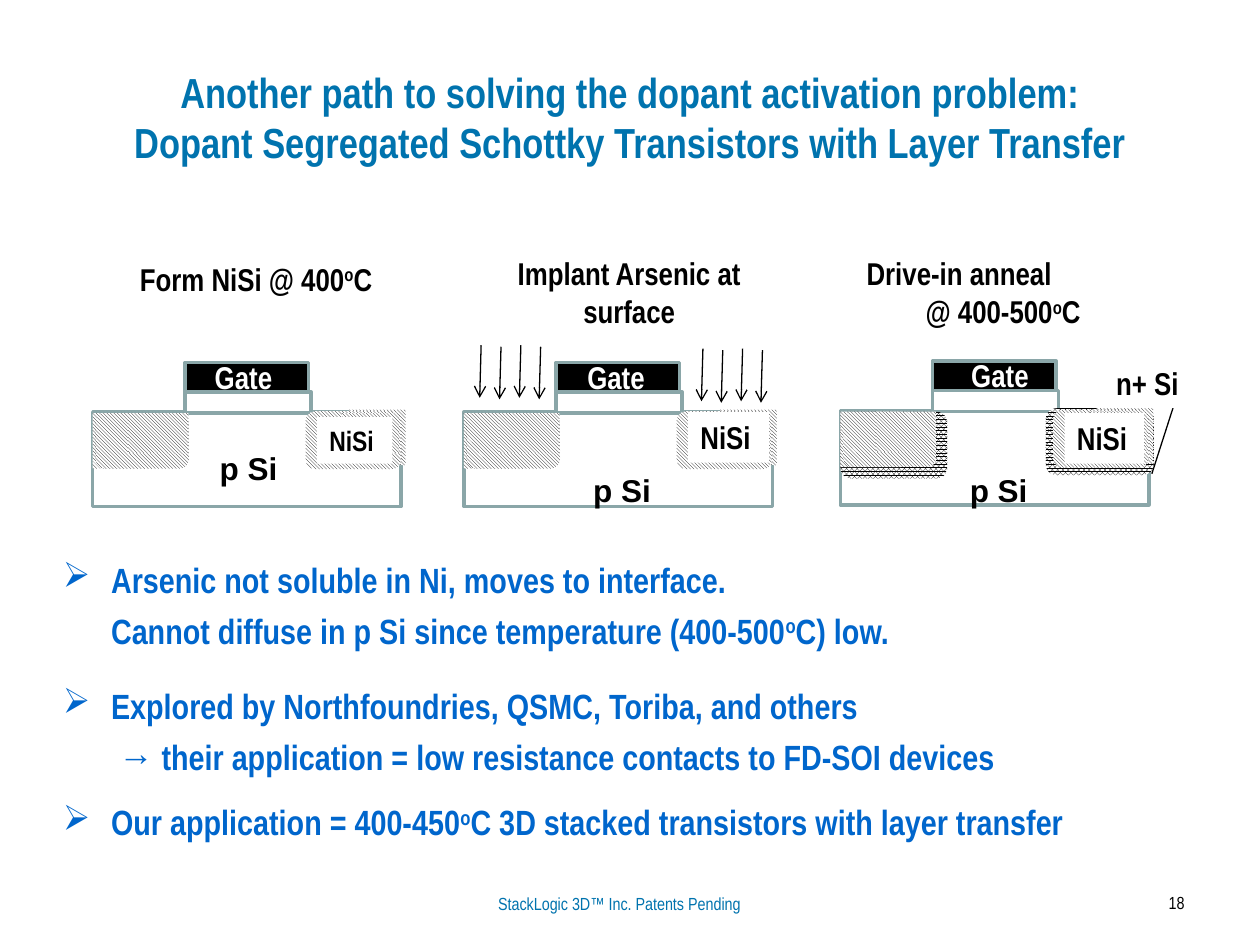
import pptx
import pptx.dml.color
import pptx.enum.dml
import pptx.enum.shapes
import pptx.enum.text
import pptx.oxml
import pptx.oxml.ns
import pptx.util
from lxml import etree

Cm = pptx.util.Cm
Pt = pptx.util.Pt
RGBColor = pptx.dml.color.RGBColor
SHAPE = pptx.enum.shapes.MSO_SHAPE
PATTERN = pptx.enum.dml.MSO_PATTERN
ALIGN = pptx.enum.text.PP_ALIGN
ANCHOR = pptx.enum.text.MSO_ANCHOR

BLACK = RGBColor(0, 0, 0)
WHITE = RGBColor(255, 255, 255)
TITLE_BLUE = RGBColor(0x00, 0x73, 0xAE)
BODY_BLUE = RGBColor(0x00, 0x66, 0xCC)
OUTLINE = RGBColor(0x8A, 0xA6, 0xA8)
NARROW = "Arial Narrow"


def add_child(parent, tag, **attributes):
    return etree.SubElement(parent, pptx.oxml.ns.qn(tag), **attributes)


def write(paragraph, text, size=18, color=BLACK, font=NARROW, bold=True,
          align=ALIGN.LEFT, space_before=0, margin=0, hang=0, bullet=None):
    """Fill a paragraph; text between a pair of ^ marks is superscript."""
    properties = paragraph._p.get_or_add_pPr()
    properties.set("marL", str(Cm(margin)))
    properties.set("indent", str(-Cm(hang)))
    paragraph.alignment = align
    paragraph.space_before = Pt(space_before)
    if bullet:
        add_child(properties, "a:buChar", char=bullet)
    else:
        add_child(properties, "a:buNone")
    for index, part in enumerate(text.split("^")):
        run = paragraph.add_run()
        run.text = part
        run.font.size = Pt(size)
        run.font.name = font
        run.font.bold = bold
        run.font.color.rgb = color
        if index % 2:
            run._r.get_or_add_rPr().set("baseline", "30000")


class Sketch:
    """Draws on one slide; boxes are (left, top, width, height) in cm."""

    def __init__(self, slide):
        self.slide = slide

    def text(self, box, *lines, anchor=ANCHOR.TOP, **style):
        """Each line is a string, or a string with its own format."""
        frame = self.slide.shapes.add_textbox(*map(Cm, box)).text_frame
        frame.word_wrap = True
        frame.vertical_anchor = anchor
        for index, line in enumerate(lines):
            words, own = (line, {}) if isinstance(line, str) else line
            paragraph = frame.add_paragraph() if index else frame.paragraphs[0]
            write(paragraph, words, **{**style, **own})

    def block(self, box, fill=WHITE, outlined=True, label=None, size=18):
        block = self.slide.shapes.add_shape(SHAPE.RECTANGLE, *map(Cm, box))
        block.shadow.inherit = False
        block.fill.solid()
        block.fill.fore_color.rgb = fill
        if outlined:
            block.line.color.rgb = OUTLINE
            block.line.width = Pt(2)
        else:
            block.line.fill.background()
        if label:
            block.text_frame.vertical_anchor = ANCHOR.TOP
            write(block.text_frame.paragraphs[0], label, size=size)

    def hatch(self, box, rounded=False, pattern=PATTERN.DARK_DOWNWARD_DIAGONAL):
        kind = SHAPE.ROUNDED_RECTANGLE if rounded else SHAPE.RECTANGLE
        region = self.slide.shapes.add_shape(kind, *map(Cm, box))
        region.shadow.inherit = False
        region.fill.patterned()
        region.fill.pattern = pattern
        region.fill.fore_color.rgb = BLACK
        region.fill.back_color.rgb = WHITE
        region.line.fill.background()

    def line(self, start, end, arrow=False):
        line = self.slide.shapes.add_connector(
            pptx.enum.shapes.MSO_CONNECTOR.STRAIGHT, *map(Cm, start + end))
        line.line.color.rgb = BLACK
        line.line.width = Pt(0.75)
        if arrow:
            add_child(line.line._get_or_add_ln(), "a:tailEnd", type="arrow")
        add_child(line._element.spPr, "a:effectLst")

    def transistor(self, x, y, gate_x, body_label, silicide_label,
                   silicide_size=18, segregated=False):
        """Draw one transistor whose silicon body has its corner at x, y."""
        def at(dx, dy, width, height):
            return x + dx, y + dy, width, height

        self.block(at(0, 0, 6.22, 1.9))
        self.block(at(1.86, -1, 2.49, 0.97), fill=BLACK)
        self.block(at(1.86, -0.41, 2.54, 0.43))
        self.text(at(*body_label, 3, 0.81), "p Si", font="Arial")
        self.text(at(gate_x, -1.22, 3, 1.02), "Gate", color=WHITE)

        source = ((0, 0.02, 1.22, 1.12), (0.06, 0.02, 1.88, 1.12),
                  (0.71, 0.02, 1.22, 0.81))
        drain = ((5.17, -0.05, 1.14, 1.12), (4.29, -0.02, 1.93, 1.17),
                 (5.03, 0.02, 1.14, 0.81))
        halos = (0, 0.02, 2.16, 1.35), (4.14, -0.05, 2.18, 1.35)
        for halo, (outer, rounded, inner) in zip(halos, (source, drain)):
            if segregated:
                self.hatch(at(*halo), rounded=True, pattern=PATTERN.PERCENT_80)
            self.hatch(at(*outer))
            self.hatch(at(*rounded), rounded=True)
            self.hatch(at(*inner))
        self.block(at(*silicide_label), outlined=False, label="NiSi",
                   size=silicide_size)


def main():
    deck = pptx.Presentation()
    deck.slide_width, deck.slide_height = Cm(25.4), Cm(19.05)
    sketch = Sketch(deck.slides.add_slide(deck.slide_layouts[6]))

    sketch.text((1.27, 0.76, 22.86, 3.18),
                "Another path to solving the dopant activation problem:",
                "Dopant Segregated Schottky Transistors with Layer Transfer",
                size=24, color=TITLE_BLUE, align=ALIGN.CENTER,
                anchor=ANCHOR.MIDDLE)
    sketch.text((8.46, 17.88, 8.05, 0.66), "StackLogic 3D™ Inc. Patents Pending",
                size=10, color=TITLE_BLUE, bold=False, align=ALIGN.CENTER)
    sketch.text((21.31, 17.86, 2.82, 0.84), "18",
                size=10, bold=False, align=ALIGN.RIGHT)

    bulleted = dict(bullet="➢", hang=0.97)
    sketch.text(
        (1.02, 11.13, 22.86, 5.16),
        ("Arsenic not soluble in Ni, moves to interface.", bulleted),
        ("Cannot diffuse in p Si since temperature (400-500^o^C) low.",
         dict(space_before=5)),
        ("Explored by Northfoundries, QSMC, Toriba, and others",
         dict(space_before=19, **bulleted)),
        ("→ their application = low resistance contacts to FD-SOI devices",
         dict(space_before=5, margin=1.12)),
        ("Our application = 400-450^o^C 3D stacked transistors with layer transfer",
         dict(space_before=13.5, **bulleted)),
        size=20, color=BODY_BLUE, margin=0.97)

    sketch.text((2.57, 5.11, 5.26, 1.02), "Form NiSi @ 400^o^C")
    sketch.transistor(1.87, 8.31, 2.21, (2.31, 0.61), (4.52, 0.1, 1.52, 0.94),
                      silicide_size=16)

    sketch.text((9.65, 5, 6.07, 1.8), "Implant Arsenic at surface",
                align=ALIGN.CENTER)
    sketch.transistor(9.35, 8.31, 2.24, (2.36, 1.07), (4.52, 0, 1.63, 1.02))
    for first_x, top in ((9.7, 6.96), (14.17, 7.03)):
        for index in range(4):
            x = first_x + 0.4 * index
            y = top + 0.03 * (index % 2)
            sketch.line((x, y), (x - 0.03, y + 1.06), arrow=True)

    sketch.text((17.17, 5, 5.94, 1.8), ("Drive-in anneal", dict(margin=0.05)),
                ("@ 400-500^o^C", dict(margin=1.24)))
    sketch.transistor(16.94, 8.28, 2.39, (2.36, 1.09), (4.52, 0.05, 1.6, 1.02),
                      segregated=True)
    sketch.line((23.67, 8.15), (23.22, 9.55))
    sketch.block((22.25, 7.21, 2.11, 1.02), outlined=False, label="n+ Si")

    deck.save("out.pptx")


if __name__ == "__main__":
    main()
